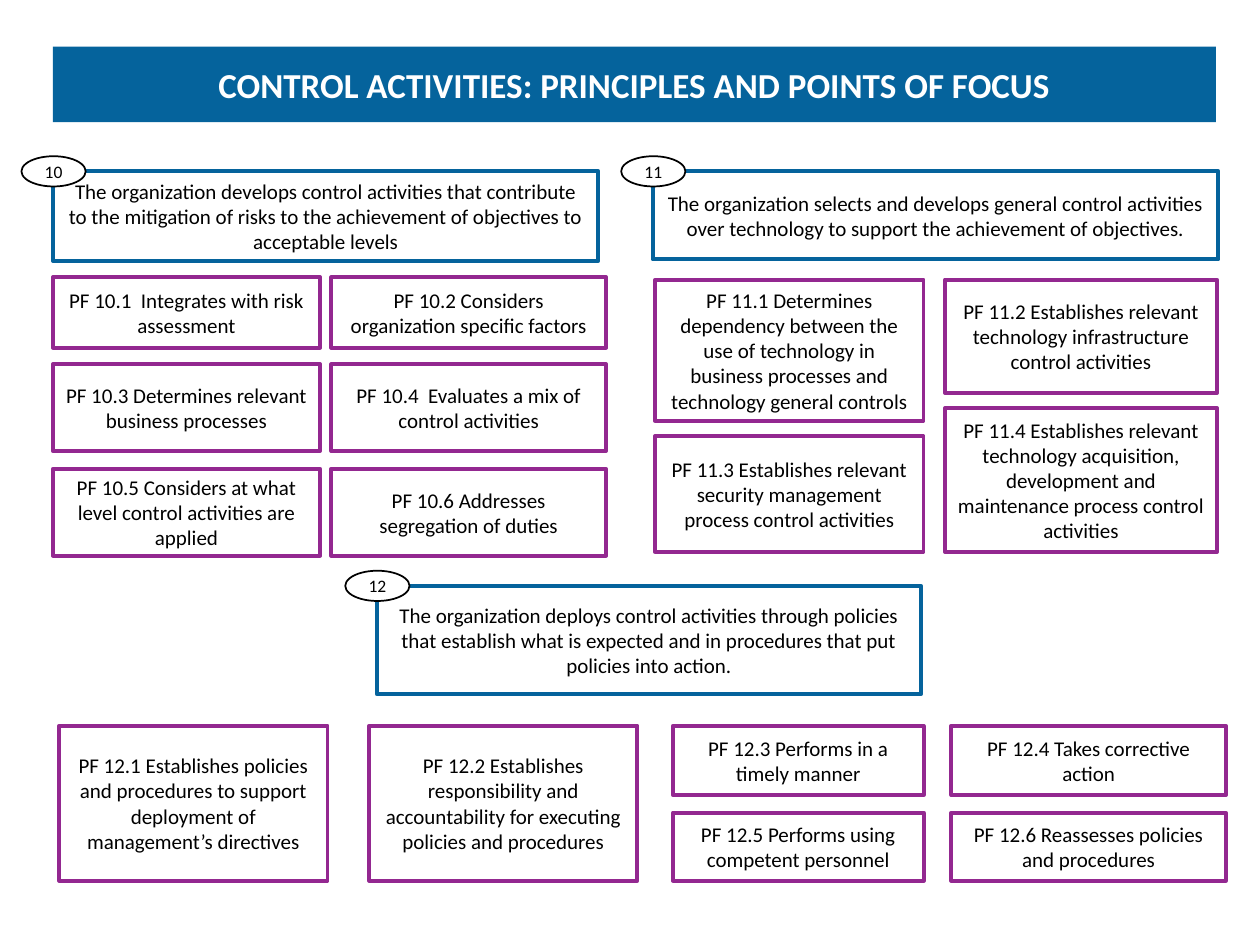
from itertools import product

from pptx import Presentation
from pptx.dml.color import RGBColor
from pptx.enum.shapes import MSO_SHAPE
from pptx.enum.text import MSO_ANCHOR, PP_ALIGN
from pptx.util import Inches, Pt

RECTANGLE, OVAL = MSO_SHAPE.RECTANGLE, MSO_SHAPE.OVAL
MIDDLE, CENTER = MSO_ANCHOR.MIDDLE, PP_ALIGN.CENTER
FONT = "Calibri"
COLORS = {"blue": "05639C", "purple": "932890", "black": "000000", "white": "FFFFFF"}

CONTRIBUTE = (
    "The organization develops control activities that contribute to the mitigation "
    "of risks to the achievement of objectives to acceptable levels"
)
TECHNOLOGY = (
    "The organization selects and develops general control activities over technology "
    "to support the achievement of objectives."
)
POLICIES = (
    "The organization deploys control activities through policies that establish what "
    "is expected and in procedures that put policies into action."
)

POINTS_10 = [
    "PF 10.1  Integrates with risk assessment",
    "PF 10.2 Considers organization specific factors",
    "PF 10.3 Determines relevant business processes",
    "PF 10.4  Evaluates a mix of control activities",
    "PF 10.5 Considers at what level control activities are applied",
    "PF 10.6 Addresses segregation of duties",
]
ROWS_10 = [(0.84, 0.56), (1.53, 0.69), (2.36, 0.69)]
COLUMNS_10 = [(0, 2.12), (2.21, 2.18)]

POINTS_11 = [
    (0.02, 0.86, 2.13, 1.12, "PF 11.1 Determines dependency between the use of technology "
     "in business processes and technology general controls"),
    (2.32, 0.86, 2.16, 0.9, "PF 11.2 Establishes relevant technology infrastructure "
     "control activities"),
    (0.02, 2.1, 2.13, 0.92, "PF 11.3 Establishes relevant security management process "
     "control activities"),
    (2.32, 1.88, 2.16, 1.14, "PF 11.4 Establishes relevant technology acquisition, "
     "development and maintenance process control activities"),
]

POINTS_12 = [
    (0, 1.11, 2.13, 1.23, "PF 12.1 Establishes policies and procedures to support "
     "deployment of management’s directives"),
    (2.46, 1.11, 2.13, 1.23, "PF 12.2 Establishes responsibility and accountability for "
     "executing policies and procedures"),
    (4.87, 1.11, 1.99, 0.55, "PF 12.3 Performs in a timely manner"),
    (7.08, 1.11, 2.18, 0.55, "PF 12.4 Takes corrective action"),
    (4.87, 1.8, 1.99, 0.54, "PF 12.5 Performs using competent personnel"),
    (7.08, 1.8, 2.18, 0.54, "PF 12.6 Reassesses policies and procedures"),
]


def rgb(name):
    """Return the named colour."""
    return RGBColor.from_string(COLORS[name])


def add_box(slide, box, text, line=None, fill=None, kind=RECTANGLE,
            line_width=2.25, size=12, color="black", bold=False):
    """Add a shape with centred text and return it."""
    shape = slide.shapes.add_shape(kind, *map(Inches, box))
    shape.shadow.inherit = False
    if fill:
        shape.fill.solid()
        shape.fill.fore_color.rgb = rgb(fill)
    else:
        shape.fill.background()
    if line:
        shape.line.color.rgb = rgb(line)
        shape.line.width = Pt(line_width)
    else:
        shape.line.fill.background()
    frame = shape.text_frame
    frame.word_wrap = True
    frame.vertical_anchor = MIDDLE
    frame.text = text
    paragraph = frame.paragraphs[0]
    paragraph.alignment = CENTER
    font = paragraph.runs[0].font
    font.name, font.size, font.bold = FONT, Pt(size), bold
    font.color.rgb = rgb(color)
    return shape


def add_title(slide, box):
    """Add the title band."""
    add_box(slide, box, "CONTROL ACTIVITIES: PRINCIPLES AND POINTS OF FOCUS",
            fill="blue", size=20, color="white", bold=True)


def add_principle(slide, box, number, statement, points, indent=0):
    """Add a numbered principle with its points of focus placed from its corner."""
    left, top, width, height = box
    add_box(slide, (left + indent, top, width, height), statement, line="blue")
    badge = add_box(slide, (left + indent - 0.25, top - 0.12, 0.51, 0.24), str(number),
                    line="black", fill="white", kind=OVAL, line_width=1, size=10)
    badge.text_frame.word_wrap = False
    for x, y, point_width, point_height, text in points:
        add_box(slide, (left + x, top + y, point_width, point_height), text, line="purple")


def main():
    """Build and save the slide."""
    presentation = Presentation()
    presentation.slide_width, presentation.slide_height = Inches(10), Inches(7.5)
    slide = presentation.slides.add_slide(presentation.slide_layouts[6])
    grid_10 = [
        (x, y, width, height, text)
        for ((y, height), (x, width)), text in zip(product(ROWS_10, COLUMNS_10), POINTS_10)
    ]
    add_title(slide, (0.42, 0.37, 9.23, 0.6))
    add_principle(slide, (0.42, 1.36, 4.33, 0.71), 10, CONTRIBUTE, grid_10)
    add_principle(slide, (5.18, 1.36, 4.49, 0.7), 11, TECHNOLOGY, POINTS_11)
    add_principle(slide, (0.47, 4.65, 4.32, 0.86), 12, POLICIES, POINTS_12, indent=2.52)
    presentation.save("out.pptx")


if __name__ == "__main__":
    main()
